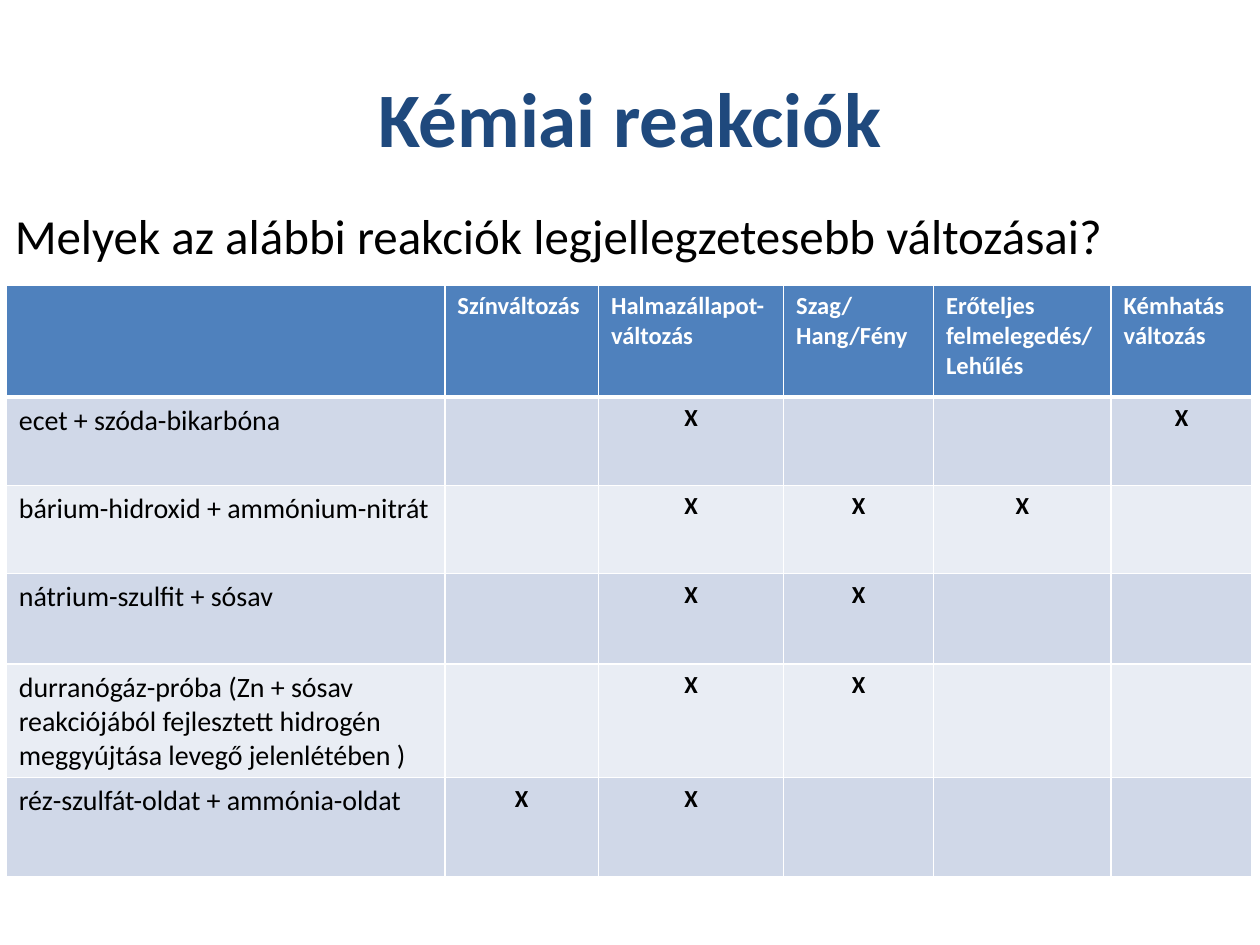
from dataclasses import dataclass

from lxml.etree import SubElement as Sub
from pptx import Presentation
from pptx.dml.color import RGBColor as Rgb
from pptx.enum.text import MSO_ANCHOR as Anchor, MSO_AUTO_SIZE as Fit, PP_ALIGN as Align
from pptx.oxml.ns import qn
from pptx.util import Pt

BLACK, WHITE, NAVY, BLUE = "000000", "FFFFFF", "1F497D", "4F81BD"
BANDS = "D0D8E8", "E9EDF4"
WIDTHS = 250.6, 87.8, 105.8, 85.7, 101.5, 80.6
HEADS = (
    "",
    "Színváltozás",
    "Halmazállapot-változás",
    "Szag/Hang/Fény",
    "Erőteljes felmelegedés/Lehűlés",
    "Kémhatás változás",
)
HEAD_HIGH = 64


@dataclass
class Test:
    name: str
    marks: tuple[int, ...]
    high: float


TESTS = (
    Test("ecet + szóda-bikarbóna", (2, 5), 50.4),
    Test("bárium-hidroxid + ammónium-nitrát", (2, 3, 4), 50.4),
    Test("nátrium-szulfit + sósav", (2, 3), 51.8),
    Test(
        "durranógáz-próba (Zn + sósav reakciójából fejlesztett hidrogén "
        "meggyújtása levegő jelenlétében )",
        (2, 3),
        55.4,
    ),
    Test("réz-szulfát-oldat + ammónia-oldat", (1, 2), 56.9),
)


def paint(code: str) -> Rgb:
    return Rgb.from_string(code)


def write(frame, text: str, *, size: float, color: str = BLACK,
          bold: bool = False, align=Align.LEFT) -> None:
    para = frame.paragraphs[0]
    para.alignment = align
    run = para.add_run()
    run.text = text
    font = run.font
    font.name, font.size, font.bold = "Calibri", Pt(size), bold
    font.color.rgb = paint(color)


def add_box(slide, left: float, top: float, width: float, high: float):
    frame = slide.shapes.add_textbox(Pt(left), Pt(top), Pt(width), Pt(high)).text_frame
    frame.word_wrap = True
    return frame


def edge(cell, top: float = 1, base: float = 1) -> None:
    props = cell._tc.get_or_add_tcPr()
    for side, width in (("L", 1), ("R", 1), ("T", top), ("B", base)):
        line = Sub(props, qn(f"a:ln{side}"), w=str(Pt(width)))
        fill = Sub(line, qn("a:solidFill"))
        Sub(fill, qn("a:srgbClr"), val=WHITE)


def tint(cell, color: str) -> None:
    cell.fill.solid()
    cell.fill.fore_color.rgb = paint(color)


def draw_grid(slide, left: float, top: float) -> None:
    highs = [HEAD_HIGH] + [test.high for test in TESTS]
    grid = slide.shapes.add_table(
        len(highs), len(WIDTHS), Pt(left), Pt(top), Pt(sum(WIDTHS)), Pt(sum(highs))
    ).table
    for col, width in zip(grid.columns, WIDTHS):
        col.width = Pt(width)
    for row, high in zip(grid.rows, highs):
        row.height = Pt(high)

    for col, head in enumerate(HEADS):
        cell = grid.cell(0, col)
        edge(cell, base=3)
        tint(cell, BLUE)
        if head:
            write(cell.text_frame, head, size=14, color=WHITE, bold=True)

    for row, test in enumerate(TESTS, 1):
        for col in range(len(WIDTHS)):
            cell = grid.cell(row, col)
            edge(cell, top=3 if row == 1 else 1)
            tint(cell, BANDS[(row - 1) % 2])
            if col in test.marks:
                write(cell.text_frame, "X", size=14, bold=True, align=Align.CENTER)
        write(grid.cell(row, 0).text_frame, test.name, size=16)


def main() -> None:
    deck = Presentation()
    deck.slide_width, deck.slide_height = Pt(720), Pt(540)
    slide = deck.slides.add_slide(deck.slide_layouts[6])

    title = add_box(slide, 36, 21.6, 648, 90)
    title.vertical_anchor = Anchor.MIDDLE
    write(title, "Kémiai reakciók", size=44, color=NAVY, bold=True, align=Align.CENTER)

    draw_grid(slide, 3.6, 162.9)

    ask = add_box(slide, 1.4, 113.8, 679.7, 41)
    ask.auto_size = Fit.SHAPE_TO_FIT_TEXT
    write(ask, "Melyek az alábbi reakciók legjellegzetesebb változásai?", size=28)

    deck.save("out.pptx")


if __name__ == "__main__":
    main()
